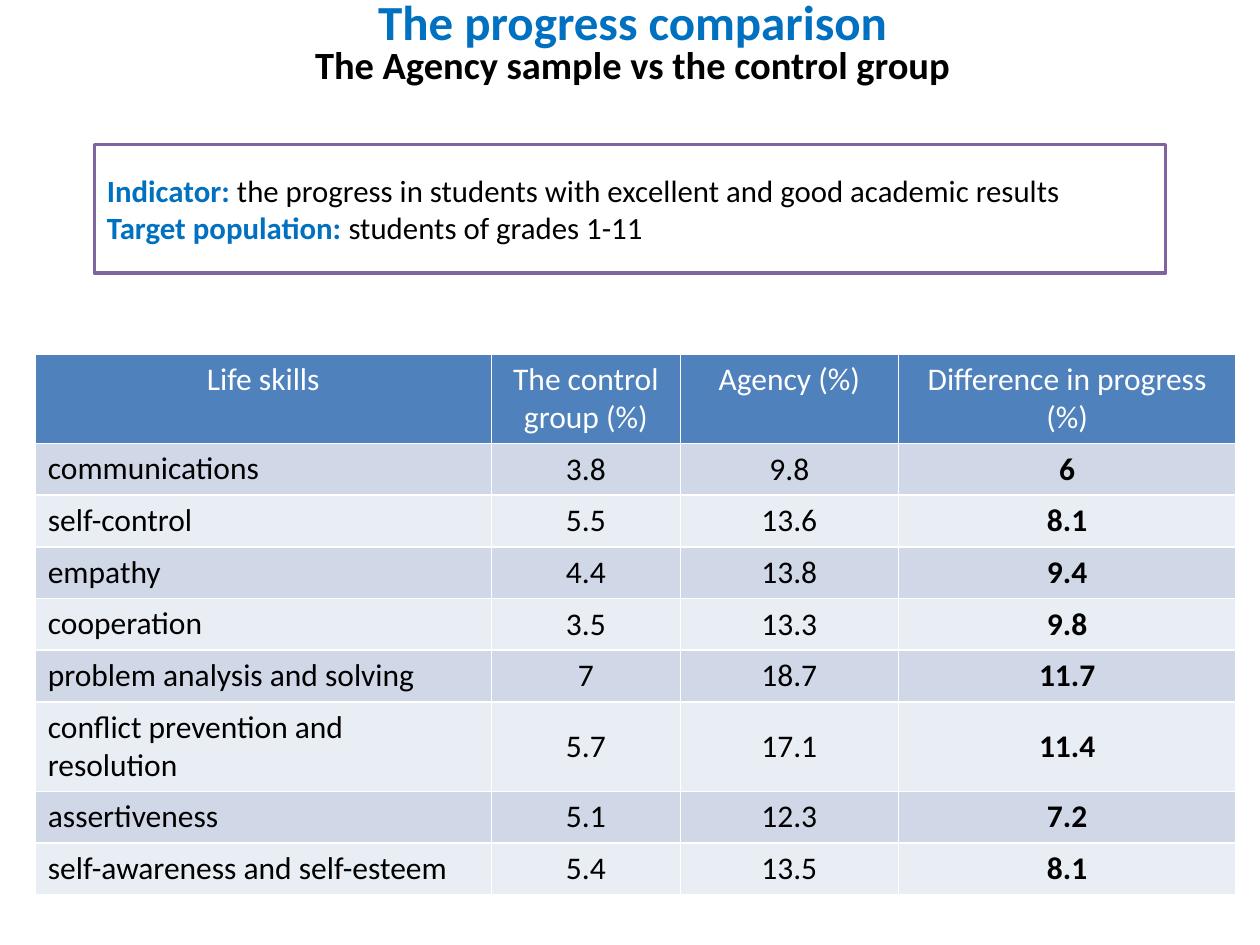
from dataclasses import dataclass
from lxml.etree import SubElement
from pptx import Presentation
from pptx.dml.color import RGBColor
from pptx.enum.shapes import MSO_SHAPE
from pptx.enum.text import MSO_ANCHOR, PP_ALIGN
from pptx.oxml.ns import qn
from pptx.util import Inches, Pt


@dataclass(frozen=True)
class Theme:
    font: str = "Calibri"
    accent: str = "0070C0"
    ink: str = "000000"
    paper: str = "FFFFFF"
    frame: str = "8064A2"
    header: str = "4F81BD"
    bands: tuple = ("D0D8E8", "E9EDF4")
    title: float = 28
    subtitle: float = 22
    note: float = 17.6
    cell: float = 18


T = Theme()
W, H = Inches(10), Inches(7.5)
COLUMNS = (3.62, 1.5, 1.73, 2.68)
ROW_HEIGHT = 0.41
HEADERS = ("Life skills", "The control group (%)", "Agency (%)",
           "Difference in progress (%)")
SKILLS = (
    ("communications", "3.8", "9.8", "6"),
    ("self-control", "5.5", "13.6", "8.1"),
    ("empathy", "4.4", "13.8", "9.4"),
    ("cooperation", "3.5", "13.3", "9.8"),
    ("problem analysis and solving", "7", "18.7", "11.7"),
    ("conflict prevention and resolution", "5.7", "17.1", "11.4"),
    ("assertiveness", "5.1", "12.3", "7.2"),
    ("self-awareness and self-esteem", "5.4", "13.5", "8.1"),
)


def share(x, y, w, h):
    return int(W * x), int(H * y), int(W * w), int(H * h)


def add_run(p, text, size, color, bold=False):
    r = p.add_run()
    r.text = text
    r.font.name = T.font
    r.font.size = Pt(size)
    r.font.bold = bold
    r.font.color.rgb = RGBColor.from_string(color)


def paint(fill, color):
    fill.solid()
    fill.fore_color.rgb = RGBColor.from_string(color)


def add_title(s):
    tf = s.shapes.add_textbox(*share(0.012, 0.003, 0.98, 0.125)).text_frame
    tf.word_wrap = True
    tf.margin_top = 0
    p = tf.paragraphs[0]
    p.alignment = PP_ALIGN.CENTER
    p.line_spacing = 0.8
    add_run(p, "The progress comparison", T.title, T.accent, True)
    p.add_line_break()
    add_run(p, "The Agency sample vs the control group", T.subtitle, T.ink, True)


def add_note(s, entries):
    sp = s.shapes.add_shape(MSO_SHAPE.RECTANGLE, *share(0.075, 0.153, 0.85, 0.136))
    sp.shadow.inherit = False
    paint(sp.fill, T.paper)
    sp.line.color.rgb = RGBColor.from_string(T.frame)
    sp.line.width = Pt(2)
    tf = sp.text_frame
    tf.word_wrap = True
    tf.vertical_anchor = MSO_ANCHOR.MIDDLE
    p = tf.paragraphs[0]
    p.alignment = PP_ALIGN.LEFT
    for i, (label, text) in enumerate(entries):
        if i:
            p.add_line_break()
        add_run(p, label, T.note, T.accent, True)
        add_run(p, text, T.note, T.ink)


def add_borders(cell):
    tcPr = cell._tc.get_or_add_tcPr()
    for side in ("lnL", "lnR", "lnT", "lnB"):
        ln = SubElement(tcPr, qn(f"a:{side}"), w=str(Pt(1)))
        fill = SubElement(ln, qn("a:solidFill"))
        SubElement(fill, qn("a:srgbClr"), val=T.paper)


def fill_cell(cell, text, row, col):
    is_header = row == 0
    add_borders(cell)
    paint(cell.fill, T.header if is_header else T.bands[(row - 1) % 2])
    p = cell.text_frame.paragraphs[0]
    p.alignment = PP_ALIGN.CENTER if is_header or col else PP_ALIGN.LEFT
    if col and not is_header:
        cell.vertical_anchor = MSO_ANCHOR.MIDDLE
    is_difference = not is_header and col == len(COLUMNS) - 1
    add_run(p, text, T.cell, T.paper if is_header else T.ink, is_difference)


def add_skills_table(s):
    rows = (HEADERS, *SKILLS)
    table = s.shapes.add_table(
        len(rows), len(COLUMNS), Inches(0.28), Inches(2.81),
        Inches(sum(COLUMNS)), Inches(ROW_HEIGHT * len(rows))).table
    for column, width in zip(table.columns, COLUMNS):
        column.width = Inches(width)
    for i, texts in enumerate(rows):
        table.rows[i].height = Inches(ROW_HEIGHT)
        for j, text in enumerate(texts):
            fill_cell(table.cell(i, j), text, i, j)


def main():
    prs = Presentation()
    prs.slide_width, prs.slide_height = W, H
    s = prs.slides.add_slide(prs.slide_layouts[6])
    add_skills_table(s)
    add_note(s, (
        ("Indicator: ",
         "the progress in students with excellent and good academic results"),
        ("Target population: ", "students of grades 1-11"),
    ))
    add_title(s)
    prs.save("out.pptx")


if __name__ == "__main__":
    main()
